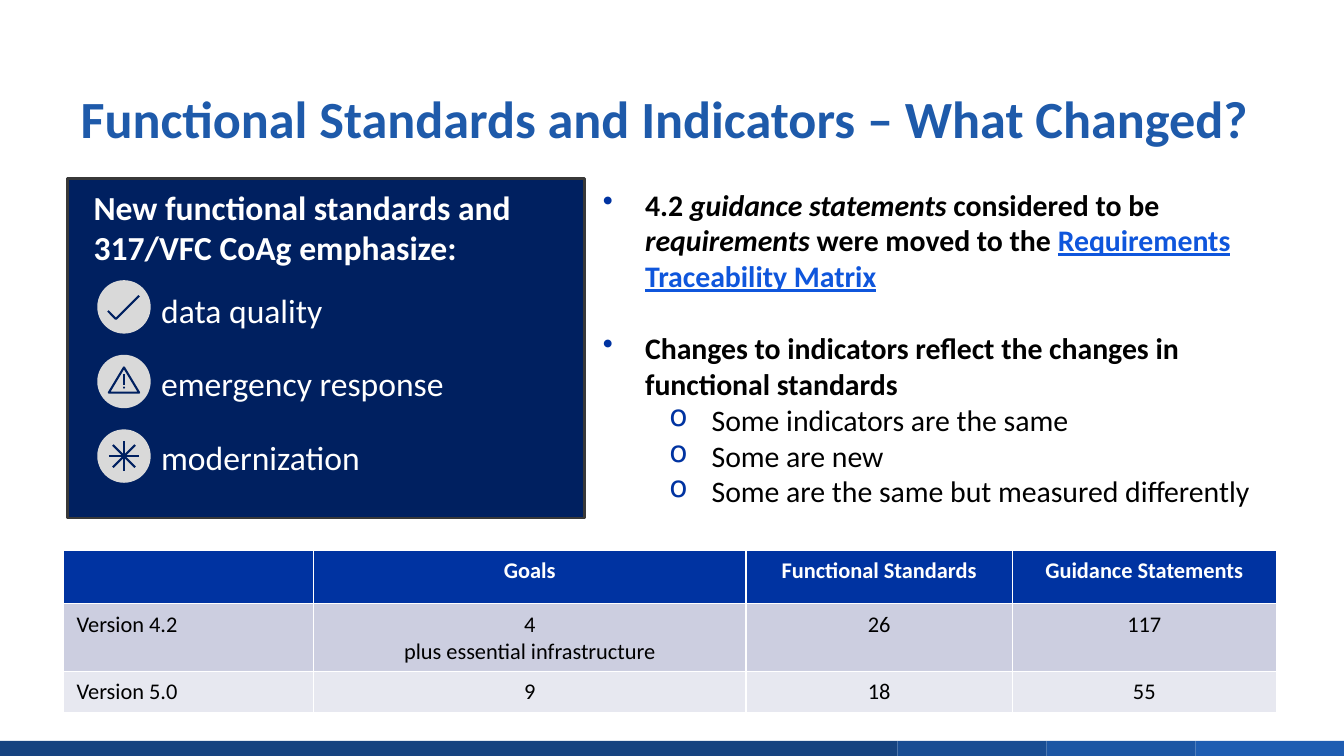
"""Build the slide on changes to functional standards and indicators."""
from pptx import Presentation
from pptx.dml.color import RGBColor
from pptx.enum.shapes import MSO_CONNECTOR as Link, MSO_SHAPE as Kind
from pptx.enum.text import MSO_ANCHOR as Anchor, PP_ALIGN as Align
from pptx.oxml.ns import qn
from pptx.util import Inches, Pt
from lxml.etree import SubElement

rgb = RGBColor.from_string
NAVY, BLUE, GREY, WHITE, BLACK = "002060", "0033A1", "D9D9D9", "FFFFFF", "000000"

deck = Presentation()
deck.slide_width, deck.slide_height = Inches(13.33), Inches(7.5)
slide = deck.slides.add_slide(deck.slide_layouts[6])
shapes = slide.shapes


def paint(shape, fill, line=None, width=1.5):
    shape.shadow.inherit = False
    if fill:
        shape.fill.solid()
        shape.fill.fore_color.rgb = rgb(fill)
    else:
        shape.fill.background()
    if line:
        shape.line.color.rgb = rgb(line)
        shape.line.width = Pt(width)
    else:
        shape.line.fill.background()


def style(font, size, color, bold=False):
    font.name, font.size, font.bold = "Calibri", Pt(size), bold
    font.color.rgb = rgb(color)


bars = [(0, 8.9, "164380"), (8.9, 1.48, "194D93"),
        (10.38, 1.48, "1C56A4"), (11.86, 1.47, "1E5DB2")]
for left, width, color in bars:
    bar = shapes.add_shape(Kind.RECTANGLE, Inches(left), Inches(7.35), Inches(width), Inches(0.15))
    paint(bar, color)

title = shapes.add_textbox(Inches(0.67), Inches(0.3), Inches(12), Inches(1.25)).text_frame
title.word_wrap = True
title.vertical_anchor = Anchor.BOTTOM
title.margin_left = title.margin_right = Inches(0.13)
title.margin_top = title.margin_bottom = Inches(0.07)
para = title.paragraphs[0]
para.text = "Functional Standards and Indicators – What Changed?"
para.line_spacing = Pt(40)
style(para.font, 37.3, "1E5AAA", True)

rows = [
    ["", "Goals", "Functional Standards", "Guidance Statements"],
    ["Version 4.2", "4\nplus essential infrastructure", "26", "117"],
    ["Version 5.0", "9", "18", "55"],
]
fills = [BLUE, "CCCEE0", "E7E8F0"]
table = shapes.add_table(3, 4, Inches(0.63), Inches(5.46), Inches(12.03), Inches(1.6)).table
for col, width in zip(table.columns, [2.48, 4.29, 2.64, 2.62]):
    col.width = Inches(width)
for row, height in zip(table.rows, [0.53, 0.67, 0.4]):
    row.height = Inches(height)
for r, row in enumerate(rows):
    for c, text in enumerate(row):
        cell = table.cell(r, c)
        cell.fill.solid()
        cell.fill.fore_color.rgb = rgb(fills[r])
        cell.margin_left = cell.margin_right = Inches(0.13)
        cell.margin_top = cell.margin_bottom = Inches(0.07)
        cell.text = text
        for para in cell.text_frame.paragraphs:
            para.alignment = Align.CENTER if c else Align.LEFT
            style(para.font, 16, BLACK if r else WHITE, r == 0)

points = [
    (0, ["4.2 ", "guidance statements ", "considered to be ", "requirements",
         " were moved to the ", "Requirements Traceability Matrix"]),
    (0, ["Changes to indicators reflect the changes in functional standards"]),
    (1, ["Some indicators are the same"]),
    (1, ["Some are new"]),
    (1, ["Some are the same but measured differently"]),
]
notes = shapes.add_textbox(Inches(5.88), Inches(1.8), Inches(6.79), Inches(3.33)).text_frame
notes.word_wrap = True
for n, (level, parts) in enumerate(points):
    para = notes.add_paragraph() if n else notes.paragraphs[0]
    para.level = level
    if n == 1:
        para.space_before = Pt(26)
    props = para._p.get_or_add_pPr()
    props.set("marL", str(Inches(1.08 if level else 0.42)))
    props.set("indent", str(Inches(-0.42)))
    tint = SubElement(props, qn("a:buClr"))
    SubElement(tint, qn("a:srgbClr")).set("val", BLUE)
    SubElement(props, qn("a:buChar")).set("char", "o" if level else "•")
    style(para.font, 21.3, BLACK, level == 0)
    for part in parts:
        run = para.add_run()
        run.text = part
        if part.strip() in ("guidance statements", "requirements"):
            run.font.italic = True
        if part.startswith("Requirements"):
            run.font.underline = True
            run.font.color.rgb = rgb("0F56DC")

panel = shapes.add_shape(Kind.RECTANGLE, Inches(0.67), Inches(1.77), Inches(5.13), Inches(3.37))
paint(panel, NAVY, "383838", 2)

focus = shapes.add_textbox(Inches(0.83), Inches(1.8), Inches(5.05), Inches(3.02)).text_frame
focus.word_wrap = True
goals = ["New functional standards and 317/VFC CoAg emphasize:",
         "data quality", "emergency response", "modernization"]
for n, text in enumerate(goals):
    para = focus.add_paragraph() if n else focus.paragraphs[0]
    para.text = text
    para.space_after = Pt(24 if n else 16)
    if n:
        para._p.get_or_add_pPr().set("marL", str(Inches(0.67)))
    style(para.font, 24, WHITE, n == 0)

mid, top, step, size = 1.23, 2.78, 0.74, 0.53
for n in range(3):
    disc = shapes.add_shape(Kind.OVAL, Inches(mid - size / 2), Inches(top + n * step),
                            Inches(size), Inches(size))
    paint(disc, GREY)
check, alert, star = [top + size / 2 + n * step for n in range(3)]

pen = shapes.build_freeform(Inches(mid - 0.16), Inches(check + 0.04))
pen.add_line_segments([(Inches(mid - 0.08), Inches(check + 0.12)),
                       (Inches(mid + 0.15), Inches(check - 0.11))], close=False)
paint(pen.convert_to_shape(), None, NAVY)

sign = shapes.add_shape(Kind.ISOSCELES_TRIANGLE, Inches(mid - 0.15), Inches(alert - 0.14),
                        Inches(0.3), Inches(0.25))
paint(sign, None, NAVY)
dot = shapes.add_shape(Kind.OVAL, Inches(mid - 0.01), Inches(alert + 0.05), Inches(0.02), Inches(0.02))
paint(dot, NAVY)

strokes = [(alert - 0.02, 0, 0.05), (star, 0, 0.15), (star, 0.15, 0),
           (star, 0.11, 0.11), (star, 0.11, -0.11)]
for y, dx, dy in strokes:
    line = shapes.add_connector(Link.STRAIGHT, Inches(mid - dx), Inches(y - dy),
                                Inches(mid + dx), Inches(y + dy))
    line.line.color.rgb = rgb(NAVY)
    line.line.width = Pt(1.5)
    SubElement(line._element.spPr, qn("a:effectLst"))

deck.save("out.pptx")
